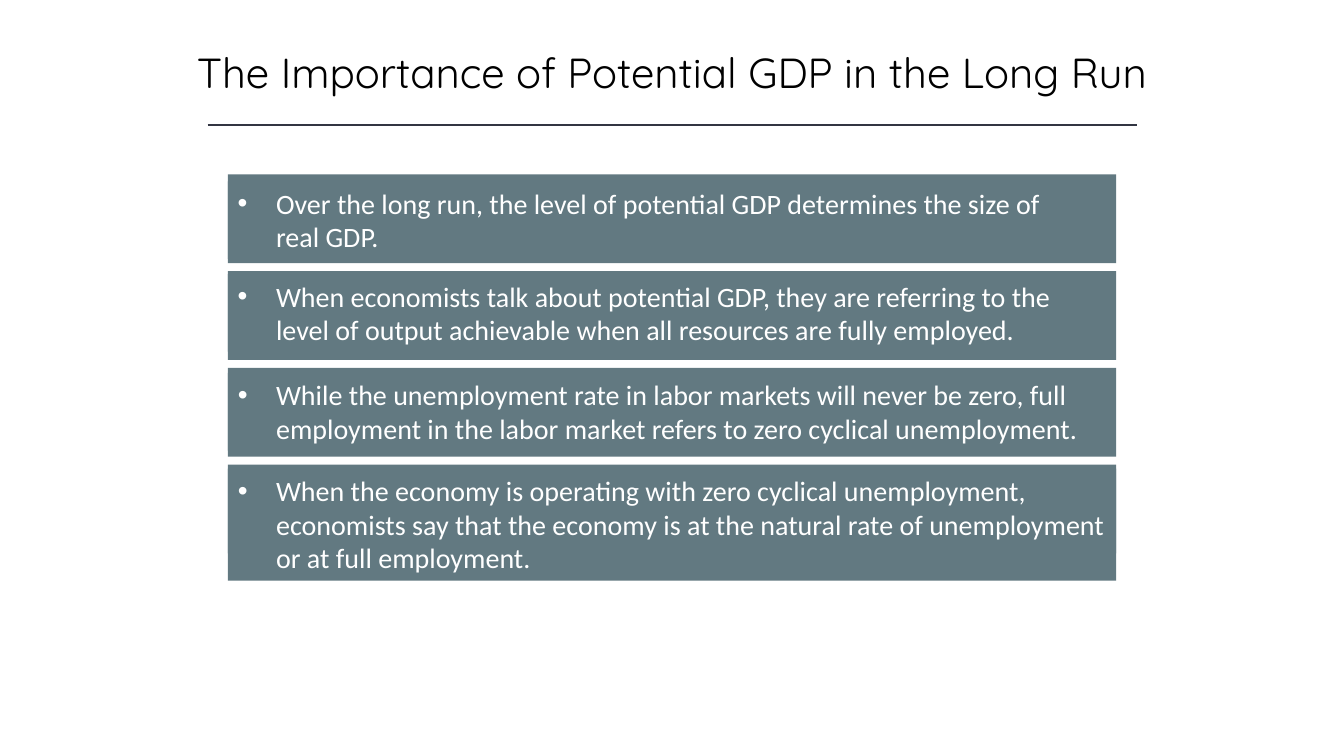
from lxml import etree
from pptx import Presentation
from pptx.dml.color import RGBColor as RGB
from pptx.enum.shapes import MSO_CONNECTOR as Connector, MSO_SHAPE as Shape
from pptx.enum.text import MSO_ANCHOR as Anchor, MSO_AUTO_SIZE as AutoSize, PP_ALIGN as Align
from pptx.oxml.ns import qn
from pptx.util import Emu, Pt

COLORS = {"title": "000000", "rule": "323542", "panel": "627981", "text": "FFFFFF"}
TITLE_FONT, BODY_FONT = "Quicksand", "Calibri"
PX = 9144  # 100 px to the inch
TITLE_ONLY = 5


def px(*lengths):
    return [Emu(length * PX) for length in lengths]


class SlideBuilder:
    def __init__(self, deck):
        self.slide = deck.slides.add_slide(deck.slide_layouts[TITLE_ONLY])

    def style_text(self, frame, text, font_name, size, color, align):
        frame.text = text
        frame.word_wrap = True
        frame.vertical_anchor = Anchor.TOP
        paragraph = frame.paragraphs[0]
        paragraph.alignment = align
        font = paragraph.runs[0].font
        font.name, font.size = font_name, Pt(size)
        font.color.rgb = RGB.from_string(COLORS[color])
        return paragraph

    def title(self, text, *box):
        heading = self.slide.shapes.title
        heading.left, heading.top, heading.width, heading.height = px(*box)
        self.style_text(heading.text_frame, text, TITLE_FONT, 30, "title", Align.CENTER)
        heading.text_frame.auto_size = AutoSize.SHAPE_TO_FIT_TEXT

    def rule(self, *ends):
        rule = self.slide.shapes.add_connector(Connector.STRAIGHT, *px(*ends))
        rule.line.color.rgb = RGB.from_string(COLORS["rule"])
        rule.line.width = Pt(1)
        etree.SubElement(rule._element.spPr, qn("a:effectLst"))

    def panel(self, *box):
        panel = self.slide.shapes.add_shape(Shape.RECTANGLE, *px(*box))
        panel.shadow.inherit = False
        panel.fill.solid()
        panel.fill.fore_color.rgb = RGB.from_string(COLORS["panel"])
        panel.line.fill.background()
        return panel

    def bullet(self, text, *box):
        frame = self.panel(*box).text_frame
        paragraph = self.style_text(frame, text, BODY_FONT, 20, "text", Align.LEFT)
        frame.auto_size = AutoSize.SHAPE_TO_FIT_TEXT
        indent = px(38)[0]
        properties = paragraph._p.get_or_add_pPr()
        properties.set("marL", str(indent))
        properties.set("indent", str(-indent))
        etree.SubElement(properties, qn("a:buFont"), typeface="Arial")
        etree.SubElement(properties, qn("a:buChar"), char="•")


# Each point: text, offset of its text below the panel top, text width, text height
POINTS = [
    ("Over the long run, the level of potential GDP determines the size of real GDP.",
     7, 854, 77),
    ("When economists talk about potential GDP, they are referring to the level of "
     "output achievable when all resources are fully employed.", 3, 876, 77),
    ("While the unemployment rate in labor markets will never be zero, full employment "
     "in the labor market refers to zero cyclical unemployment.", 5, 878, 77),
    ("When the economy is operating with zero cyclical unemployment, economists say that "
     "the economy is at the natural rate of unemployment or at full employment.",
     4, 881, 111),
]
PANEL_LEFT, PANEL_TOP, PANEL_WIDTH, PANEL_HEIGHT, PANEL_PITCH = 226, 173, 881, 88, 96


def main():
    deck = Presentation()
    deck.slide_width, deck.slide_height = px(1333, 750)
    builder = SlideBuilder(deck)

    # Heading and rule
    builder.title("The Importance of Potential GDP in the Long Run", 150, 41, 1033, 61)
    builder.rule(206, 124, 1128, 124)

    # Stacked points
    for row, (text, offset, width, height) in enumerate(POINTS):
        top = PANEL_TOP + row * PANEL_PITCH
        builder.panel(PANEL_LEFT, top, PANEL_WIDTH, PANEL_HEIGHT)
        builder.bullet(text, PANEL_LEFT, top + offset, width, height)

    deck.save("out.pptx")


if __name__ == "__main__":
    main()
